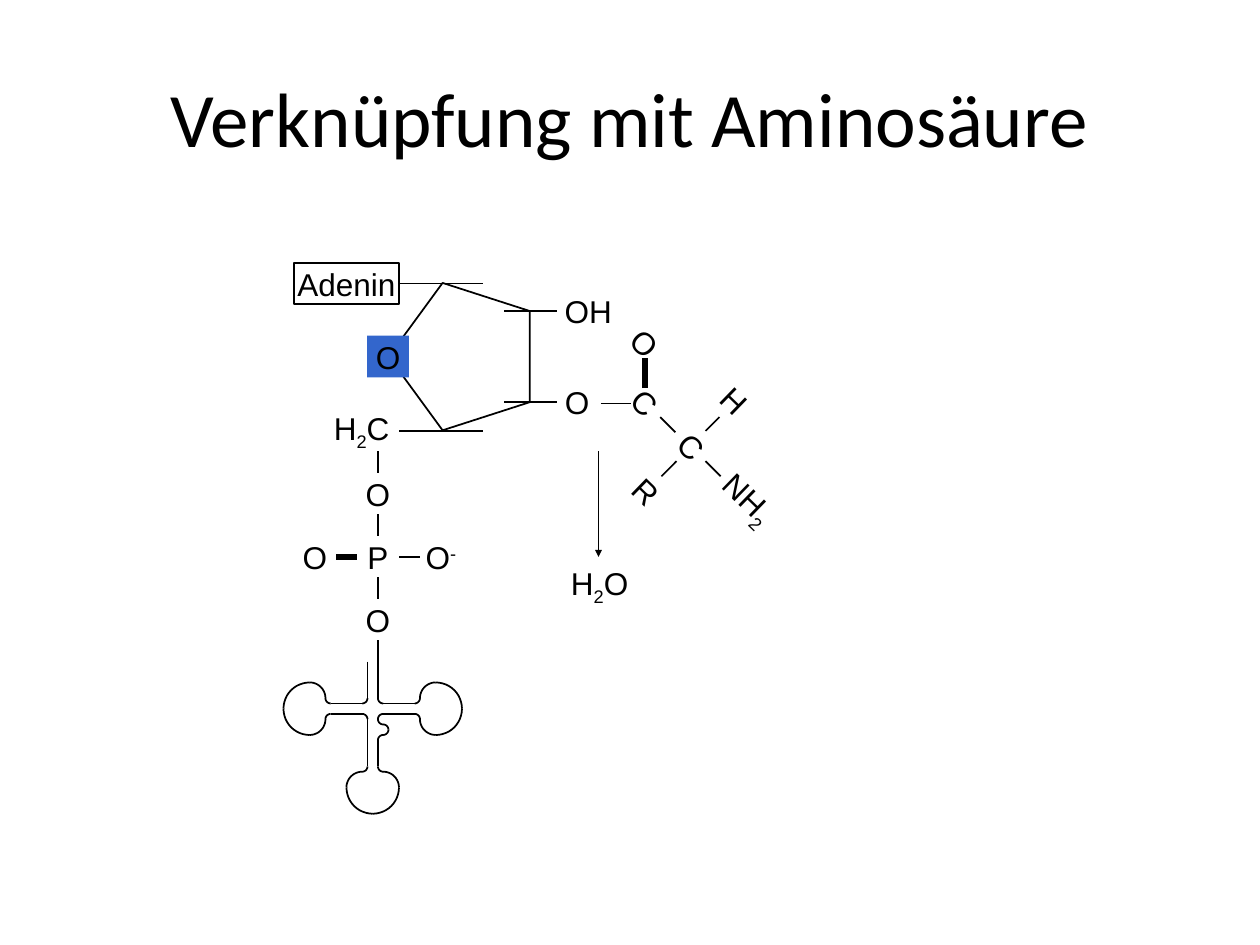
import math

from lxml import etree
from pptx import Presentation
from pptx.dml.color import RGBColor
from pptx.enum import shapes, text
from pptx.oxml.ns import qn
from pptx.util import Inches, Pt

BLACK = RGBColor(0x00, 0x00, 0x00)
BLUE = RGBColor(0x33, 0x66, 0xCC)

TITLE = "Verknüpfung mit Aminosäure"
ATOM = 0.33  # side of an atom label
TILT = 44.1  # rotation of the amino acid labels
GRID = 1 / 24  # grid step of the tRNA outline

# Runs of each label: "_" lowers and "^" raises the part that follows it.
# parts, centre x, centre y, width, rotation
ATOMS = [
    (["P"], 3, 4.42, ATOM, 0),
    (["O"], 3, 4.92, ATOM, 0),
    (["O"], 2.5, 4.42, ATOM, 0),
    (["O", "^-"], 3.5, 4.42, ATOM, 0),
    (["O"], 3, 3.92, ATOM, 0),
    (["H", "_2", "C"], 2.87, 3.42, 0.58, 0),
    (["O"], 4.58, 3.19, ATOM, 0),
    (["OH"], 4.67, 2.47, ATOM, 0),
    (["C"], 5.12, 3.19, ATOM, TILT),
    (["C"], 5.49, 3.54, ATOM, TILT),
    (["O"], 5.12, 2.72, ATOM, TILT),
    (["H"], 5.83, 3.18, ATOM, TILT),
    (["R"], 5.13, 3.9, ATOM, TILT),
    (["NH", "_2"], 5.93, 3.97, 0.58, TILT),
    (["H", "_2", "O"], 4.76, 4.65, ATOM, 0),
]

# x1, y1, x2, y2, line width
BONDS = [
    (3, 4.75, 3, 4.58, 1),
    (2.83, 4.42, 2.67, 4.42, 3),
    (3.17, 4.42, 3.33, 4.42, 1),
    (3, 4.25, 3, 4.08, 1),
    (3, 3.75, 3, 3.58, 1),
    (3.17, 3.42, 3.83, 3.42, 1),
    (4, 3.19, 4.42, 3.19, 1),
    (4, 2.47, 4.42, 2.47, 1),
    (3.17, 2.25, 3.83, 2.25, 1),
    (5.6, 3.42, 5.71, 3.31, 1),
    (5.25, 3.78, 5.37, 3.66, 1),
    (5.24, 3.31, 5.36, 3.43, 1),
    (5.6, 3.66, 5.72, 3.78, 1),
    (5.12, 3.08, 5.12, 2.84, 3),
    (4.77, 3.2, 5.01, 3.2, 0.75),
]
WATER_ARROW = (4.75, 3.58, 4.75, 4.42, 1)

# tRNA stems in grid steps: x1, y1, x2, y2
STEMS = [
    (72, 122, 72, 133), (73, 134, 79, 134), (73, 136, 79, 136),
    (72, 141, 72, 146), (70, 137, 70, 146), (63, 136, 69, 136),
    (63, 134, 69, 134), (70, 126, 70, 133),
]
# tRNA quarter arcs in grid steps: centre x, centre y, radius, quadrant
# (0 lower right, 1 lower left, 2 upper left, 3 upper right)
ARCS = [
    # right loop
    (73, 133, 1, 1), (79, 133, 1, 0), (83, 133, 3, 2), (83, 135, 5, 3),
    (83, 135, 5, 0), (83, 137, 3, 1), (79, 137, 1, 3), (73, 137, 1, 2),
    # variable loop
    (73, 137, 1, 1), (73, 139, 1, 3), (73, 139, 1, 0), (73, 141, 1, 2),
    # lower loop
    (73, 146, 1, 1), (73, 150, 3, 3), (71, 150, 5, 0), (71, 150, 5, 1),
    (69, 150, 3, 2), (69, 146, 1, 0),
    # left loop
    (69, 137, 1, 3), (63, 137, 1, 2), (59, 137, 3, 0), (59, 135, 5, 1),
    (59, 135, 5, 2), (59, 133, 3, 3), (63, 133, 1, 1), (69, 133, 1, 0),
]


def outline(shape, width=1):
    """Give a shape a black line, no fill and no shadow."""
    shape.shadow.inherit = False
    shape.fill.background()
    shape.line.color.rgb = BLACK
    shape.line.width = Pt(width)


def add_line(slide, x1, y1, x2, y2, width=1):
    """Draw a straight black line between two points in inches."""
    line = slide.shapes.add_connector(
        shapes.MSO_CONNECTOR.STRAIGHT, *map(Inches, (x1, y1, x2, y2)))
    line.line.color.rgb = BLACK
    line.line.width = Pt(width)
    etree.SubElement(line._element.spPr, qn("a:effectLst"))
    return line


def add_quarter_arc(slide, cx, cy, radius, quadrant, steps=12):
    """Draw a quarter circle given in grid steps."""
    angles = [math.pi / 2 * (quadrant + i / steps) for i in range(steps + 1)]
    points = [(Inches((cx + radius * math.cos(a)) * GRID),
               Inches((cy + radius * math.sin(a)) * GRID)) for a in angles]
    builder = slide.shapes.build_freeform(*points[0])
    builder.add_line_segments(points[1:], close=False)
    outline(builder.convert_to_shape())


def write(shape, parts, font="Arial", size=18, wrap=False):
    """Write centred text, with lowered and raised parts, into a shape."""
    frame = shape.text_frame
    frame.word_wrap = wrap
    frame.vertical_anchor = text.MSO_ANCHOR.MIDDLE
    paragraph = frame.paragraphs[0]
    paragraph.alignment = text.PP_ALIGN.CENTER
    paragraph.font.name = font
    paragraph.font.size = Pt(size)
    paragraph.font.color.rgb = BLACK
    baselines = {"_": "-25000", "^": "30000"}
    for part in parts:
        run = paragraph.add_run()
        run.text = part.lstrip("_^")
        if part[0] in baselines:
            run._r.get_or_add_rPr().set("baseline", baselines[part[0]])


def add_label(slide, parts, cx, cy, width, rotation=0):
    """Add an outlined label around a centre point."""
    label = slide.shapes.add_shape(
        shapes.MSO_SHAPE.RECTANGLE,
        *map(Inches, (cx - width / 2, cy - ATOM / 2, width, ATOM)))
    outline(label)
    label.rotation = rotation
    write(label, parts)
    return label


prs = Presentation()
prs.slide_width, prs.slide_height = Inches(10), Inches(7.5)
slide = prs.slides.add_slide(prs.slide_layouts[6])

title = slide.shapes.add_textbox(*map(Inches, (0.5, 0.3, 9, 1.25)))
write(title, [TITLE], "Calibri", 44, wrap=True)

for stem in STEMS:
    add_line(slide, *(v * GRID for v in stem))
for arc in ARCS:
    add_quarter_arc(slide, *arc)

for bond in BONDS:
    add_line(slide, *bond)
arrow = add_line(slide, *WATER_ARROW)
etree.SubElement(arrow.line._get_or_add_ln(), qn("a:tailEnd"),
                 type="triangle", w="sm", len="sm")

ribose = slide.shapes.add_shape(
    shapes.MSO_SHAPE.REGULAR_PENTAGON, *map(Inches, (3.06, 2.27, 1.17, 1.12)))
ribose.rotation = 270
outline(ribose)

ring_oxygen = add_label(slide, ["O"], 3.08, 2.83, ATOM)
ring_oxygen.fill.solid()
ring_oxygen.fill.fore_color.rgb = BLUE
ring_oxygen.line.fill.background()

add_label(slide, ["Adenin"], 2.75, 2.25, 0.83)

for atom in ATOMS:
    add_label(slide, *atom).line.fill.background()

prs.save("out.pptx")
